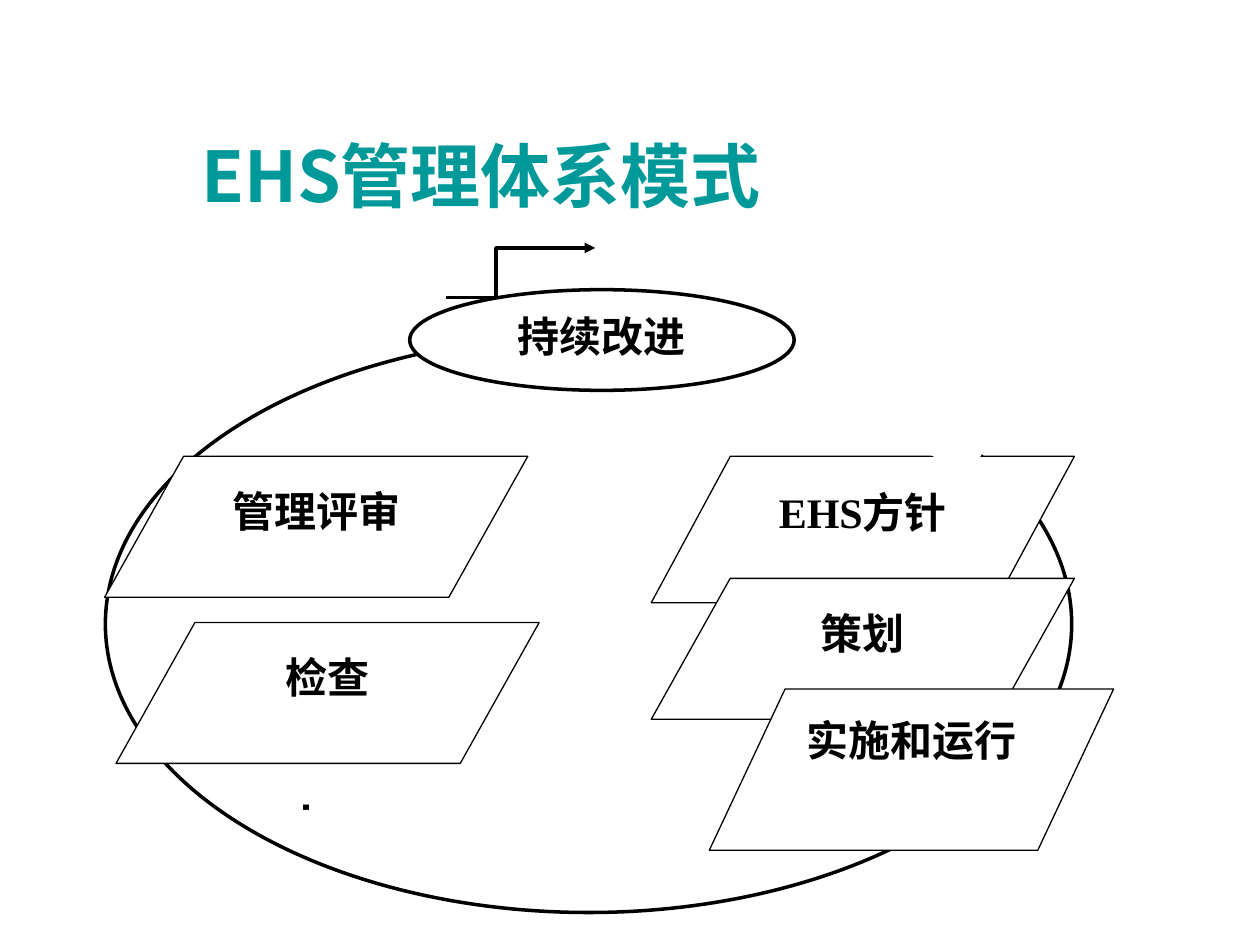
from lxml.etree import SubElement
from pptx import Presentation
from pptx.dml.color import RGBColor
from pptx.enum.shapes import MSO_SHAPE
from pptx.enum.text import MSO_ANCHOR, PP_ALIGN
from pptx.oxml.ns import qn
from pptx.util import Cm, Pt

BLACK = RGBColor(0x00, 0x00, 0x00)
WHITE = RGBColor(0xFF, 0xFF, 0xFF)
TEAL = RGBColor(0x00, 0x99, 0x99)


def bezier_points(start, control_1, control_2, end, steps=12):
    """Points along a cubic curve, without its start."""
    points = []
    for step in range(1, steps + 1):
        t = step / steps
        weights = ((1 - t) ** 3, 3 * t * (1 - t) ** 2, 3 * t ** 2 * (1 - t), t ** 3)
        corners = (start, control_1, control_2, end)
        points.append(tuple(sum(weight * corner[axis] for weight, corner in zip(weights, corners))
                            for axis in (0, 1)))
    return points


class DiagramSlide:
    label_font = "Times New Roman"
    title_font = "Noto Sans CJK SC"

    def __init__(self, presentation):
        self.slide = presentation.slides.add_slide(presentation.slide_layouts[6])

    def label(self, shape, text, size, font=label_font, color=BLACK, bold=True,
              alignment=PP_ALIGN.CENTER):
        frame = shape.text_frame
        frame.word_wrap = True
        frame.vertical_anchor = MSO_ANCHOR.TOP
        paragraph = frame.paragraphs[0]
        paragraph.text = text
        paragraph.alignment = alignment
        paragraph.font.name = font
        paragraph.font.size = Pt(size)
        paragraph.font.bold = bold
        paragraph.font.color.rgb = color

    def outline(self, shape, width):
        shape.shadow.inherit = False
        if width:
            shape.line.color.rgb = BLACK
            shape.line.width = Pt(width)
        else:
            shape.line.fill.background()

    def shape(self, kind, left, top, width, height, line_width=0, rotation=0):
        shape = self.slide.shapes.add_shape(kind, Cm(left), Cm(top), Cm(width), Cm(height))
        shape.fill.solid()
        shape.fill.fore_color.rgb = WHITE
        shape.rotation = rotation
        self.outline(shape, line_width)
        return shape

    def oval(self, left, top, width, height, rotation=0):
        return self.shape(MSO_SHAPE.OVAL, left, top, width, height, 2, rotation)

    def step(self, text, left, top, width=8.53, height=2.84, slant=0.56):
        shape = self.shape(MSO_SHAPE.PARALLELOGRAM, left, top, width, height, 0.75)
        shape.adjustments[0] = slant
        self.label(shape, text, 24)
        return shape

    def curved_arrow(self, start, *segments):
        points = []
        for segment in segments:
            points += bezier_points(points[-1] if points else start, *segment)
        builder = self.slide.shapes.build_freeform(*start, scale=Cm(1))
        builder.add_line_segments(points, close=False)
        arrow = builder.convert_to_shape()
        arrow.fill.background()
        self.outline(arrow, 2)
        SubElement(arrow.element.spPr.find(qn("a:ln")), qn("a:tailEnd"), type="triangle")

    def title(self, text, left, top, width, height):
        box = self.slide.shapes.add_textbox(Cm(left), Cm(top), Cm(width), Cm(height))
        self.label(box, text, 40, self.title_font, TEAL, alignment=PP_ALIGN.LEFT)


def main():
    presentation = Presentation()
    presentation.slide_width, presentation.slide_height = Cm(25.4), Cm(19.05)
    diagram = DiagramSlide(presentation)

    # Large cycle
    cycle = diagram.oval(6.05, 2.84, 11.63, 19.48, rotation=270)
    diagram.label(cycle, ".", 32, "Arial", bold=False, alignment=PP_ALIGN.LEFT)

    # First steps on both sides
    diagram.step("EHS方针", 13.13, 9.2, height=2.95, slant=0.54)
    diagram.step("管理评审", 2.11, 9.2)
    diagram.step("检查", 2.34, 12.55)

    # Arrow out of the cycle, and the gap in the cycle
    diagram.curved_arrow(
        (8.69, 6.4),
        ((8.86, 6.22), (9.02, 6.07), (9.32, 5.89)),
        ((9.63, 5.72), (10.13, 5.46), (10.54, 5.38)),
        ((10.95, 5.28), (11.35, 5.33), (11.76, 5.38)),
    )
    diagram.shape(MSO_SHAPE.RECTANGLE, 14.76, 7.11, 5.44, 1.22, rotation=30.2)

    # Remaining steps and the improvement goal
    diagram.step("策划", 13.13, 11.66)
    improvement = diagram.oval(8.26, 5.84, 7.75, 2.03)
    diagram.label(improvement, "持续改进", 24)
    operation = diagram.step("实施和运行", 14.3, 13.89, 8.15, 3.25, 0.47)
    frame = operation.text_frame
    frame.margin_left = frame.margin_right = frame.margin_top = frame.margin_bottom = 0

    # Title
    diagram.title("EHS管理体系模式", 3.81, 2.54, 14.81, 1.96)

    presentation.save("out.pptx")


if __name__ == "__main__":
    main()
